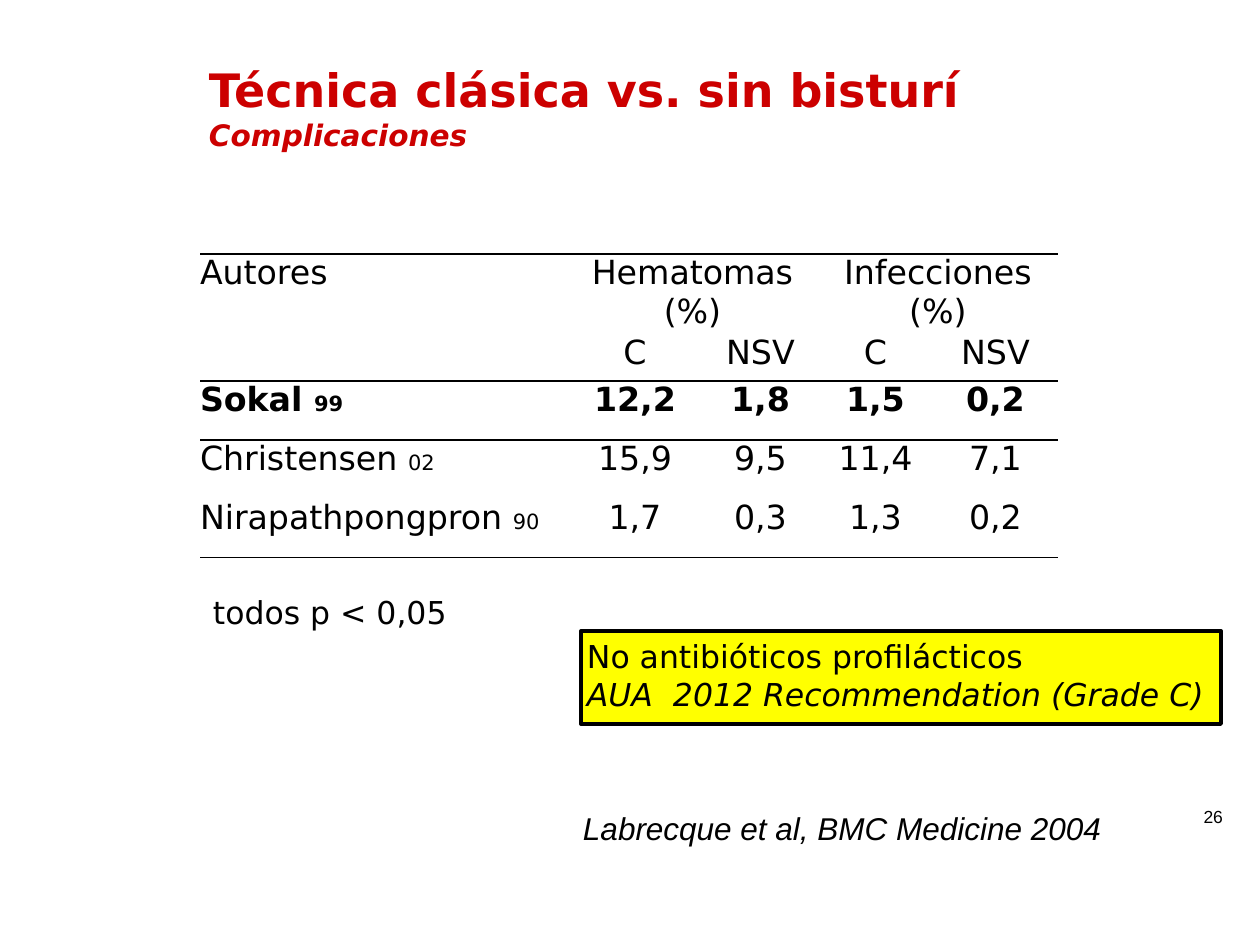
from lxml import etree
from pptx import Presentation, util as u
from pptx.dml.color import RGBColor
from pptx.enum import shapes, text
from pptx.oxml import ns

RED = RGBColor(0xCC, 0, 0)
BLACK = RGBColor(0, 0, 0)
WHITE = RGBColor(0xFF, 0xFF, 0xFF)
YELLOW = RGBColor(0xFF, 0xFF, 0)
SANS, ARIAL = "DejaVu Sans", "Arial"
LEFT, MID, RIGHT = text.PP_ALIGN.LEFT, text.PP_ALIGN.CENTER, text.PP_ALIGN.RIGHT
NO_STYLE = "{2D5ABB26-0587-4C30-8999-92F81FD0307C}"

COLS = [367, 136, 115, 115, 125]
ROWS = [79, 47, 59, 59, 59]
STUDIES = [
    ("Sokal", "99", ["12,2", "1,8", "1,5", "0,2"]),
    ("Christensen", "02", ["15,9", "9,5", "11,4", "7,1"]),
    ("Nirapathpongpron", "90", ["1,7", "0,3", "1,3", "0,2"]),
]


def px(n):
    return u.Emu(round(n * 914400 / 126))


def style(run, size, color=BLACK, face=SANS, bold=False, slant=False):
    font = run.font
    font.size, font.name = u.Pt(size), face
    font.bold, font.italic = bold, slant
    font.color.rgb = color


def inset(frame, pad, wrap):
    frame.margin_left = frame.margin_right = px(pad)
    frame.margin_top = frame.margin_bottom = px(pad)
    frame.word_wrap = wrap


def label(slide, box, words, size, face=SANS, slant=False, align=LEFT):
    frame = slide.shapes.add_textbox(*map(px, box)).text_frame
    inset(frame, 6, False)
    frame.text = words
    para = frame.paragraphs[0]
    para.alignment = align
    style(para.runs[0], size, face=face, slant=slant)


def title(slide, box):
    frame = slide.shapes.add_textbox(*map(px, box)).text_frame
    inset(frame, 6, True)
    frame.vertical_anchor = text.MSO_ANCHOR.BOTTOM
    para = frame.paragraphs[0]
    para.text = "Técnica clásica vs. sin bisturí\vComplicaciones"
    head, sub = para.runs
    style(head, 26.3, RED, bold=True)
    style(sub, 16.9, RED, bold=True, slant=True)


def rule(cell, side):
    line = etree.SubElement(cell._tc.get_or_add_tcPr(), ns.qn("a:" + side), w="12700")
    fill = etree.SubElement(line, ns.qn("a:solidFill"))
    etree.SubElement(fill, ns.qn("a:srgbClr"), val=str(BLACK))


def write(cell, words, align=MID, bold=False):
    cell.text_frame.text = words
    for para in cell.text_frame.paragraphs:
        para.alignment = align
        for run in para.runs:
            style(run, 19, bold=bold)


def table(slide, box):
    grid = slide.shapes.add_table(len(ROWS), len(COLS), *map(px, box)).table
    grid._tbl.tblPr.find(ns.qn("a:tableStyleId")).text = NO_STYLE
    for col, wide in zip(grid.columns, COLS):
        col.width = px(wide)
    for row, high in zip(grid.rows, ROWS):
        row.height = px(high)
    for r in range(len(ROWS)):
        for c in range(len(COLS)):
            cell = grid.cell(r, c)
            cell.margin_left = cell.margin_right = 0
            cell.margin_top = cell.margin_bottom = 0
            if r in (0, 2):
                rule(cell, "lnT")
            if r == len(ROWS) - 1:
                rule(cell, "lnB")
            cell.fill.solid()
            cell.fill.fore_color.rgb = WHITE

    write(grid.cell(0, 0), "Autores", LEFT)
    for c, name in ((1, "Hematomas"), (3, "Infecciones")):
        grid.cell(0, c).merge(grid.cell(0, c + 1))
        write(grid.cell(0, c), name + "\n(%)")
        write(grid.cell(1, c), "C")
        write(grid.cell(1, c + 1), "NSV")
    for r, (name, year, rates) in enumerate(STUDIES, 2):
        bold = r == 2
        write(grid.cell(r, 0), name + " ", LEFT, bold)
        run = grid.cell(r, 0).text_frame.paragraphs[0].add_run()
        run.text = year
        style(run, 12, bold=bold)
        for c, rate in enumerate(rates, 1):
            write(grid.cell(r, c), rate, bold=bold)


def advice(slide, box):
    rect = slide.shapes.add_shape(shapes.MSO_SHAPE.RECTANGLE, *map(px, box))
    rect.shadow.inherit = False
    rect.fill.solid()
    rect.fill.fore_color.rgb = YELLOW
    rect.line.color.rgb = BLACK
    rect.line.width = u.Pt(2.25)
    frame = rect.text_frame
    inset(frame, 6, False)
    frame.vertical_anchor = text.MSO_ANCHOR.TOP
    frame.text = "No antibióticos profilácticos\nAUA  2012 Recommendation (Grade C)"
    for para, slant in zip(frame.paragraphs, (False, True)):
        para.alignment = LEFT
        style(para.runs[0], 18, slant=slant)


def main():
    deck = Presentation()
    deck.slide_width, deck.slide_height = px(1260), px(945)
    slide = deck.slides.add_slide(deck.slide_layouts[6])
    title(slide, (203, 53, 973, 105))
    table(slide, (200, 254, sum(COLS), sum(ROWS)))
    label(slide, (1192, 800, 37, 34), "26", 10, ARIAL, align=RIGHT)
    label(slide, (207, 587, 251, 52), "todos p < 0,05", 18)
    label(slide, (577, 803, 542, 48), "Labrecque et al, BMC Medicine 2004", 18, ARIAL, True)
    advice(slide, (581, 631, 640, 93))
    deck.save("out.pptx")


if __name__ == "__main__":
    main()
